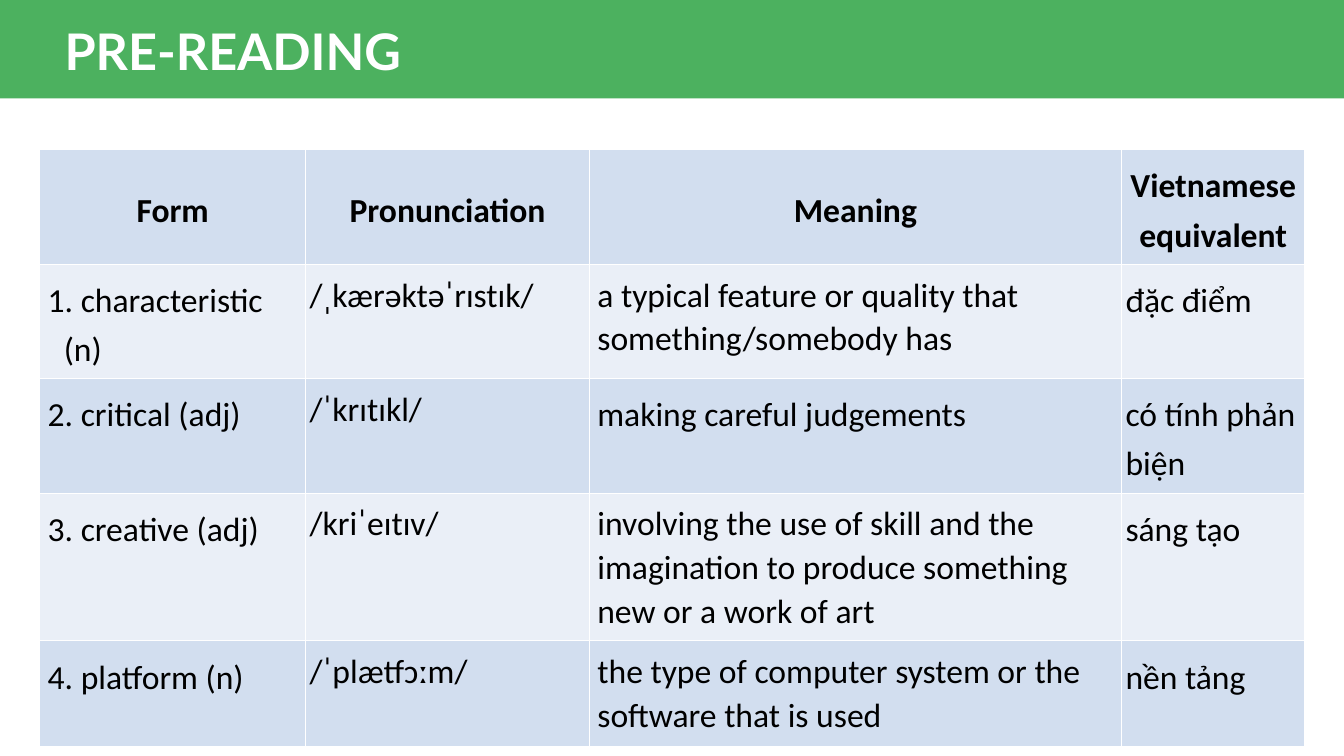
import pptx
import pptx.dml.color
import pptx.enum.shapes
import pptx.enum.text
import pptx.util

WIDTH, HEIGHT = pptx.util.Inches(13.33), pptx.util.Inches(7.5)
COLORS = {
    "band": "4CB15F",
    "title": "FFFFFF",
    "text": "000000",
    "dark_row": "D2DEEF",
    "light_row": "EAEFF7",
}
# Column widths and row heights in percent of the slide
COLUMNS = [19.8, 21.1, 39.6, 13.65]
ROWS = [14.8, 14.8, 14.8, 19.2, 14]
HEADERS = ["Form", "Pronunciation", "Meaning", "Vietnamese equivalent"]
WORDS = [
    ["1. characteristic (n)", "/ˌkærəktəˈrɪstɪk/",
     "a typical feature or quality that something/somebody has", "đặc điểm"],
    ["2. critical (adj)", "/ˈkrɪtɪkl/",
     "making careful judgements", "có tính phản biện"],
    ["3. creative (adj)", "/kriˈeɪtɪv/",
     "involving the use of skill and the imagination to produce something "
     "new or a work of art", "sáng tạo"],
    ["4. platform (n)", "/ˈplætfɔːm/",
     "the type of computer system or the software that is used", "nền tảng"],
]
LOOSE, TIGHT = 1.2, 1.07
SHORT_MEANING = 30
NARROW, WIDE = pptx.util.Inches(0.04), pptx.util.Inches(0.08)
HANGING = pptx.util.Inches(0.16)


def rgb(name):
    return pptx.dml.color.RGBColor.from_string(COLORS[name])


def x(percent):
    return round(WIDTH * percent / 100)


def y(percent):
    return round(HEIGHT * percent / 100)


def set_font(p, name, size, color, bold):
    p.font.name = name
    p.font.size = pptx.util.Pt(size)
    p.font.color.rgb = rgb(color)
    p.font.bold = bold


def add_band(s):
    sp = s.shapes.add_shape(
        pptx.enum.shapes.MSO_SHAPE.RECTANGLE, 0, 0, WIDTH, y(13))
    sp.shadow.inherit = False
    sp.fill.solid()
    sp.fill.fore_color.rgb = rgb("band")
    sp.line.fill.background()
    return sp


def add_title(s, band, text):
    """Fill the title placeholder and lift it in front of the band."""
    sp = s.shapes.title
    band.element.addnext(sp.element)
    sp.left, sp.top, sp.width, sp.height = x(4.05), y(1.85), x(37.5), y(9.5)
    tf = sp.text_frame
    tf.text = text
    tf.vertical_anchor = pptx.enum.text.MSO_ANCHOR.MIDDLE
    p = tf.paragraphs[0]
    p.alignment = pptx.enum.text.PP_ALIGN.LEFT
    set_font(p, "Lato", 36, "title", True)


def fill_cell(cell, text, fill, spacing, margin, header=False):
    cell.fill.solid()
    cell.fill.fore_color.rgb = rgb(fill)
    cell.margin_left = cell.margin_right = margin
    cell.margin_top = cell.margin_bottom = WIDE
    cell.text = text
    p = cell.text_frame.paragraphs[0]
    p.line_spacing = spacing
    set_font(p, "Calibri", 24, "text", header)
    if header:
        cell.vertical_anchor = pptx.enum.text.MSO_ANCHOR.MIDDLE
        p.alignment = pptx.enum.text.PP_ALIGN.CENTER
    return p


def hang(p):
    pPr = p._p.get_or_add_pPr()
    pPr.set("marL", str(HANGING))
    pPr.set("indent", str(-HANGING))


def add_word_table(s):
    table = s.shapes.add_table(
        len(ROWS), len(COLUMNS), x(2.95), y(19.8),
        x(sum(COLUMNS)), y(sum(ROWS))).table
    table.first_row = table.horz_banding = False
    for column, share in zip(table.columns, COLUMNS):
        column.width = x(share)
    for row, share in zip(table.rows, ROWS):
        row.height = y(share)

    for c, header in enumerate(HEADERS):
        fill_cell(table.cell(0, c), header, "dark_row", LOOSE, NARROW, True)
    for r, (form, sound, meaning, vietnamese) in enumerate(WORDS, 1):
        fill = "light_row" if r % 2 else "dark_row"
        spacing = LOOSE if len(meaning) < SHORT_MEANING else TIGHT
        hang(fill_cell(table.cell(r, 0), form, fill, LOOSE, WIDE))
        fill_cell(table.cell(r, 1), sound, fill, TIGHT, NARROW)
        fill_cell(table.cell(r, 2), meaning, fill, spacing, WIDE)
        fill_cell(table.cell(r, 3), vietnamese, fill, LOOSE, NARROW)


def main():
    prs = pptx.Presentation()
    prs.slide_width, prs.slide_height = WIDTH, HEIGHT
    s = prs.slides.add_slide(prs.slide_layouts.get_by_name("Title Only"))
    add_title(s, add_band(s), "PRE-READING")
    add_word_table(s)
    prs.save("out.pptx")


if __name__ == "__main__":
    main()
